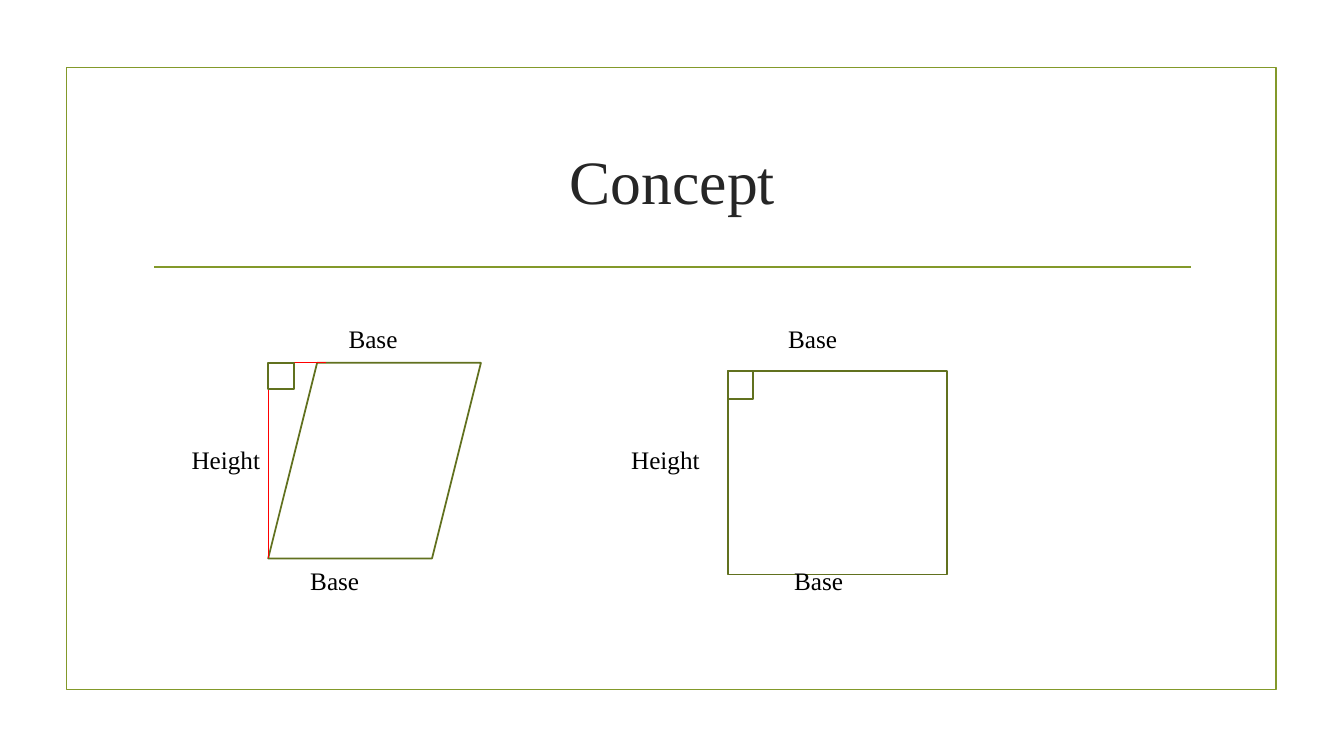
from pptx import Presentation
from pptx.dml.color import RGBColor
from pptx.enum.shapes import MSO_CONNECTOR as Link, MSO_SHAPE as Shape
from pptx.enum.text import MSO_ANCHOR as Anchor, PP_ALIGN as Align
from pptx.oxml.ns import qn
from pptx.util import Inches, Pt
from lxml import etree

FONT = "Times New Roman"
LIME = RGBColor(0x83, 0x99, 0x2A)
OLIVE = RGBColor(0x61, 0x71, 0x1F)
RED = RGBColor(0xFF, 0, 0)
BLACK = RGBColor(0, 0, 0)
GREY = RGBColor(0x26, 0x26, 0x26)

# Content: kind, left, top, width, height in inches
TITLE = "Concept"
FRAME = (Shape.RECTANGLE, 0.66, 0.67, 12, 6.17)
SLANT = (Shape.PARALLELOGRAM, 2.66, 3.6, 2.11, 1.94)
BOX = (Shape.RECTANGLE, 7.22, 3.68, 2.17, 2.02)
CORNERS = [(0.26, 0.26), (0.25, 0.28)]
RULE = (1.53, 2.65, 11.81, 2.65)

# Label rows: text, middle of the row, centre of each label
LABELS = [
    ("Base", 3.36, (3.70, 8.06)),
    ("Height", 4.56, (2.24, 6.60)),
    ("Base", 5.76, (3.32, 8.12)),
]
LABEL_W, LABEL_H = 1, 0.3

deck = Presentation()
deck.slide_width, deck.slide_height = Inches(13.33), Inches(7.5)
slide = deck.slides.add_slide(deck.slide_layouts[5])
shapes = slide.shapes


def outline(kind, left, top, width, height, color=OLIVE):
    shape = shapes.add_shape(kind, *map(Inches, (left, top, width, height)))
    shape.shadow.inherit = False
    shape.fill.background()
    shape.line.color.rgb = color
    shape.line.width = Pt(1.25)


def draw_line(x1, y1, x2, y2, color=RED, weight=0.75):
    line = shapes.add_connector(Link.STRAIGHT, *map(Inches, (x1, y1, x2, y2)))
    line.line.color.rgb = color
    line.line.width = Pt(weight)
    etree.SubElement(line._element.spPr, qn("a:effectLst"))


def write(text, frame, size=18, color=BLACK):
    frame.text = text
    frame.word_wrap = True
    frame.vertical_anchor = Anchor.MIDDLE
    para = frame.paragraphs[0]
    para.alignment = Align.CENTER
    para.font.name, para.font.size = FONT, Pt(size)
    para.font.color.rgb = color


# Frame, rule and title
outline(*FRAME, color=LIME)
draw_line(*RULE, color=LIME, weight=1.25)
title = shapes.title
title.left, title.top = Inches(1.42), Inches(1.07)
title.width, title.height = Inches(10.5), Inches(1.43)
write(TITLE, title.text_frame, size=44, color=GREY)

# Figures, with the height of the slanted one
outline(*SLANT)
outline(*BOX)
_, left, top, _, height = SLANT
draw_line(left, top + height, left, top)
draw_line(left, top, left + 0.57, top)

# Right-angle marks in the top left corners
for figure, size in zip((SLANT, BOX), CORNERS):
    outline(Shape.RECTANGLE, *figure[1:3], *size)

# Labels
for text, middle, centres in LABELS:
    for centre in centres:
        label = shapes.add_textbox(
            Inches(centre - LABEL_W / 2), Inches(middle - LABEL_H / 2),
            Inches(LABEL_W), Inches(LABEL_H))
        frame = label.text_frame
        frame.margin_top = frame.margin_bottom = 0
        write(text, frame)

deck.save("out.pptx")
